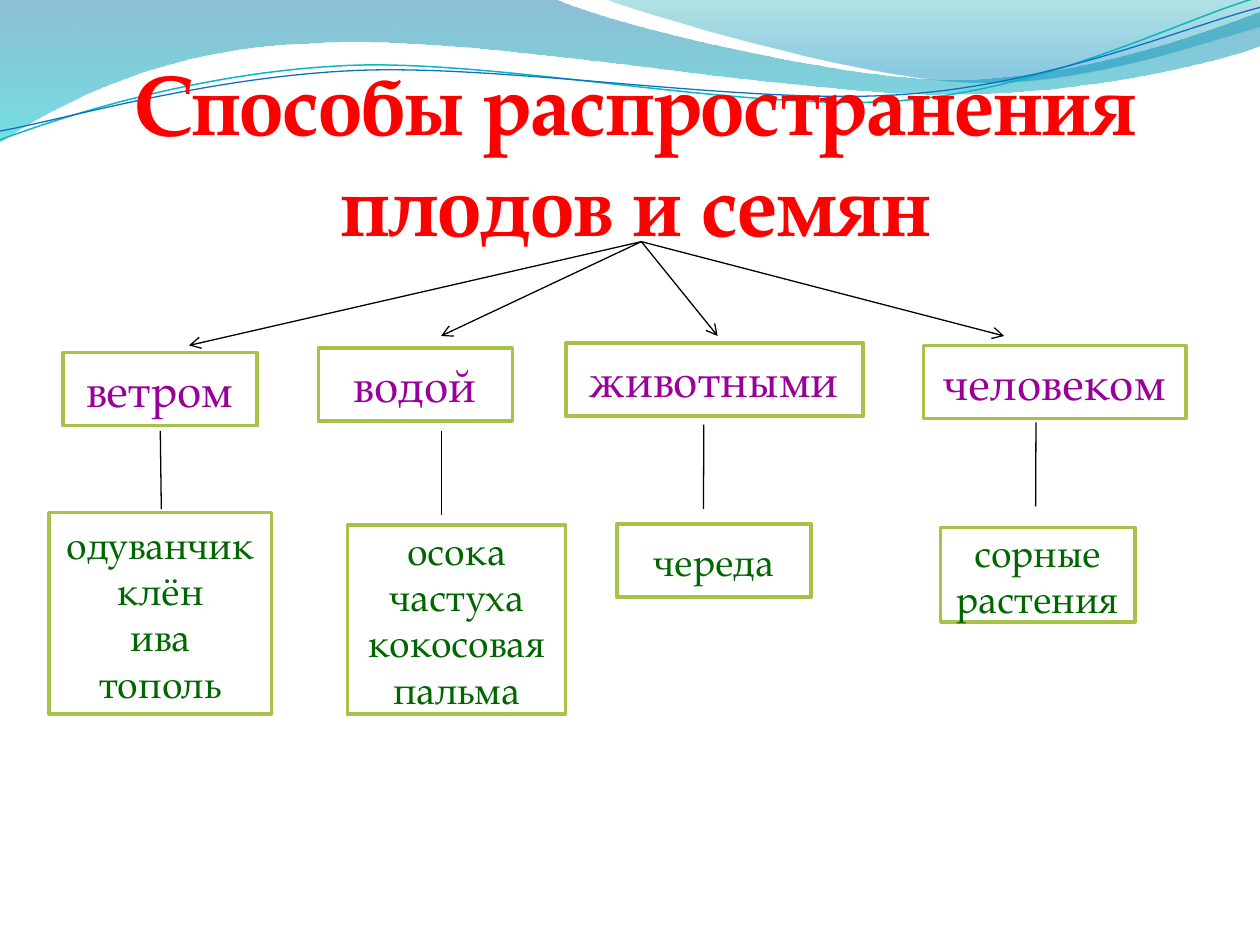
from math import cos, radians, sin

from lxml.etree import SubElement
from pptx import Presentation
from pptx.dml.color import RGBColor
from pptx.enum.shapes import MSO_CONNECTOR as CONNECTOR, MSO_SHAPE as SHAPE
from pptx.enum.text import MSO_ANCHOR as ANCHOR, PP_ALIGN as ALIGN
from pptx.oxml import parse_xml
from pptx.oxml.ns import nsdecls, qn
from pptx.util import Pt

FONT = "TeX Gyre Pagella"
BLACK, WHITE, RED, OLIVE = "000000", "FFFFFF", "FF0000", "A5C249"
PURPLE, GREEN = "990099", "006600"

TITLE = "Способы распространения плодов и семян"
FAN_START = (366.5, 138.1)

# Each way: its box, arrow tip, line down to the examples, and their box.
WAYS = [
    dict(name="ветром", box=(36, 201.5, 110.9, 41.8), tip=(108, 197.4),
         link=(91.6, 246.2, 92.2, 290.9),
         examples=["одуванчик", "клён", "ива", "тополь"],
         examples_box=(28.1, 293, 127.2, 115)),
    dict(name="водой", box=(181.9, 198.7, 110.9, 41.8), tip=(252, 192),
         link=(252.2, 246.2, 252.2, 294.5),
         examples=["осока", "частуха", "кокосовая пальма"],
         examples_box=(198.6, 300, 124.7, 108)),
    dict(name="животными", box=(323.3, 196, 170, 41.8), tip=(410.1, 192),
         link=(402.2, 242.6, 402, 290.9),
         examples=["череда"],
         examples_box=(352.6, 299.5, 110.9, 41.8)),
    dict(name="человеком", box=(527.8, 197.5, 150, 41.8), tip=(573.8, 192),
         link=(592, 241.4, 591.8, 289.4),
         examples=["сорные растения"],
         examples_box=(537.6, 301.5, 110.9, 54)),
]

# Outlines: two numbers are a point, six are a Bezier curve.
# Gradient stops: position %, colour, opacity %.
WAVES = [
    ([(0, 0), (316.8, -0.7), (342.7, 12.2, 478.1, 45.4, 545.8, 45.4),
      (614.2, 45.4, 689.8, 18.7, 720, 6.5), (720.7, 25.9),
      (707.8, 31.7, 626.4, 54.7, 537.1, 54),
      (447.8, 54, 275, 20.2, 185, 24.5),
      (92.9, 25.9, 33.1, 59.8, -0.7, 81.4), (0, 0)],
     [(0, "0074A1", 45), (100, "00C6CF", 55)]),
    ([(344.9, -0.7), (366.5, 7.9, 491, 44.6, 553.7, 46.8),
      (616.3, 49.7, 691.9, 23, 720, 15.1), (720, 0), (344.9, -0.7)],
     [(0, "00A1A9", 30), (80, "008BBF", 45)]),
]
RIPPLES = [
    ([(0, 79.9), (34.6, 67, 113.8, 41, 199.4, 37.4),
      (284.4, 33.8, 427, 64.1, 513.4, 57.6),
      (599.8, 51.1, 675.4, 10.8, 718.6, -1.4)], "0AB8BF", 0.85),
    ([(0, 74.9), (33.8, 69.1, 118.1, 43.9, 203.8, 40.3),
      (290.2, 36.7, 429.8, 60.5, 516.2, 54),
      (601.9, 48.2, 677.5, 15.1, 720, 4.3)], "0F6FC6", 0.75),
]
RIPPLE_TILT = -2.7


def color(hex_string):
    return RGBColor.from_string(hex_string)


def turn(x, y, degrees):
    angle = radians(degrees)
    return x * cos(angle) - y * sin(angle), x * sin(angle) + y * cos(angle)


def add_outline(slide, outline, close, tilt=0):
    """Draw the outline with real Bezier curves, in a frame tilted by some degrees."""
    points = [turn(Pt(part[i]), Pt(part[i + 1]), -tilt)
              for part in outline for i in range(0, len(part), 2)]
    builder = slide.shapes.build_freeform(*points[0])
    builder.add_line_segments(points[1:], close=close)
    shape = builder.convert_to_shape()
    shape.shadow.inherit = False

    segments = iter(list(shape.element.spPr.iter(qn("a:lnTo"))))
    for part in outline[1:]:
        group = [next(segments) for _ in range(len(part) // 2)]
        if len(group) == 3:
            curve = parse_xml(f'<a:cubicBezTo {nsdecls("a")}/>')
            group[0].addprevious(curve)
            for segment in group:
                curve.append(segment[0])
                segment.getparent().remove(segment)

    center_x, center_y = turn(shape.left + shape.width / 2,
                              shape.top + shape.height / 2, tilt)
    shape.left = round(center_x - shape.width / 2)
    shape.top = round(center_y - shape.height / 2)
    shape.rotation = tilt
    return shape


def add_wave(slide, outline, stops):
    shape = add_outline(slide, outline, True)
    shape.line.fill.background()
    stop_xml = "".join(
        f'<a:gs pos="{position * 1000}"><a:srgbClr val="{hex_string}">'
        f'<a:alpha val="{opacity * 1000}"/></a:srgbClr></a:gs>'
        for position, hex_string, opacity in stops)
    gradient = parse_xml(
        f'<a:gradFill {nsdecls("a")} rotWithShape="1"><a:gsLst>{stop_xml}</a:gsLst>'
        '<a:lin ang="5400000" scaled="0"/></a:gradFill>')
    shape.element.spPr.find(qn("a:custGeom")).addnext(gradient)


def add_ripple(slide, outline, hex_string, width):
    shape = add_outline(slide, outline, False, RIPPLE_TILT)
    shape.fill.background()
    shape.line.color.rgb = color(hex_string)
    shape.line.width = Pt(width)


def add_line(slide, ends, arrow=False):
    connector = slide.shapes.add_connector(CONNECTOR.STRAIGHT, *map(Pt, ends))
    connector.line.color.rgb = color(BLACK)
    connector.line.width = Pt(0.75)
    if arrow:
        line = connector.element.spPr.find(qn("a:ln"))
        SubElement(line, qn("a:tailEnd"), type="arrow")
    SubElement(connector.element.spPr, qn("a:effectLst"))


def write(shape, lines, size, hex_string, bold=False):
    frame = shape.text_frame
    frame.word_wrap = True
    frame.text = "\n".join(lines)
    for paragraph in frame.paragraphs:
        paragraph.alignment = ALIGN.CENTER
        font = paragraph.runs[0].font
        font.name, font.size, font.bold = FONT, Pt(size), bold
        font.color.rgb = color(hex_string)
    return frame


def add_box(slide, place, lines, size, hex_string):
    shape = slide.shapes.add_shape(SHAPE.RECTANGLE, *map(Pt, place))
    shape.shadow.inherit = False
    shape.fill.solid()
    shape.fill.fore_color.rgb = color(WHITE)
    shape.line.color.rgb = color(OLIVE)
    shape.line.width = Pt(2)
    write(shape, lines, size, hex_string).vertical_anchor = ANCHOR.MIDDLE


def add_title(slide):
    box = slide.shapes.add_textbox(Pt(36), Pt(33.8), Pt(654), Pt(110.9))
    frame = write(box, [TITLE], 48, RED, bold=True)
    frame.vertical_anchor = ANCHOR.BOTTOM
    frame.margin_left = frame.margin_right = frame.margin_bottom = 0
    frame.margin_top = Pt(3.6)


def main():
    presentation = Presentation()
    presentation.slide_width, presentation.slide_height = Pt(720), Pt(540)
    slide = presentation.slides.add_slide(presentation.slide_layouts[6])
    for wave in WAVES:
        add_wave(slide, *wave)
    for ripple in RIPPLES:
        add_ripple(slide, *ripple)
    add_title(slide)
    for way in WAYS:
        add_line(slide, FAN_START + way["tip"], arrow=True)
    for way in WAYS:
        add_line(slide, way["link"])
    for way in WAYS:
        add_box(slide, way["box"], [way["name"]], 26, PURPLE)
    for way in WAYS:
        add_box(slide, way["examples_box"], way["examples"], 22, GREEN)
    presentation.save("out.pptx")


if __name__ == "__main__":
    main()
